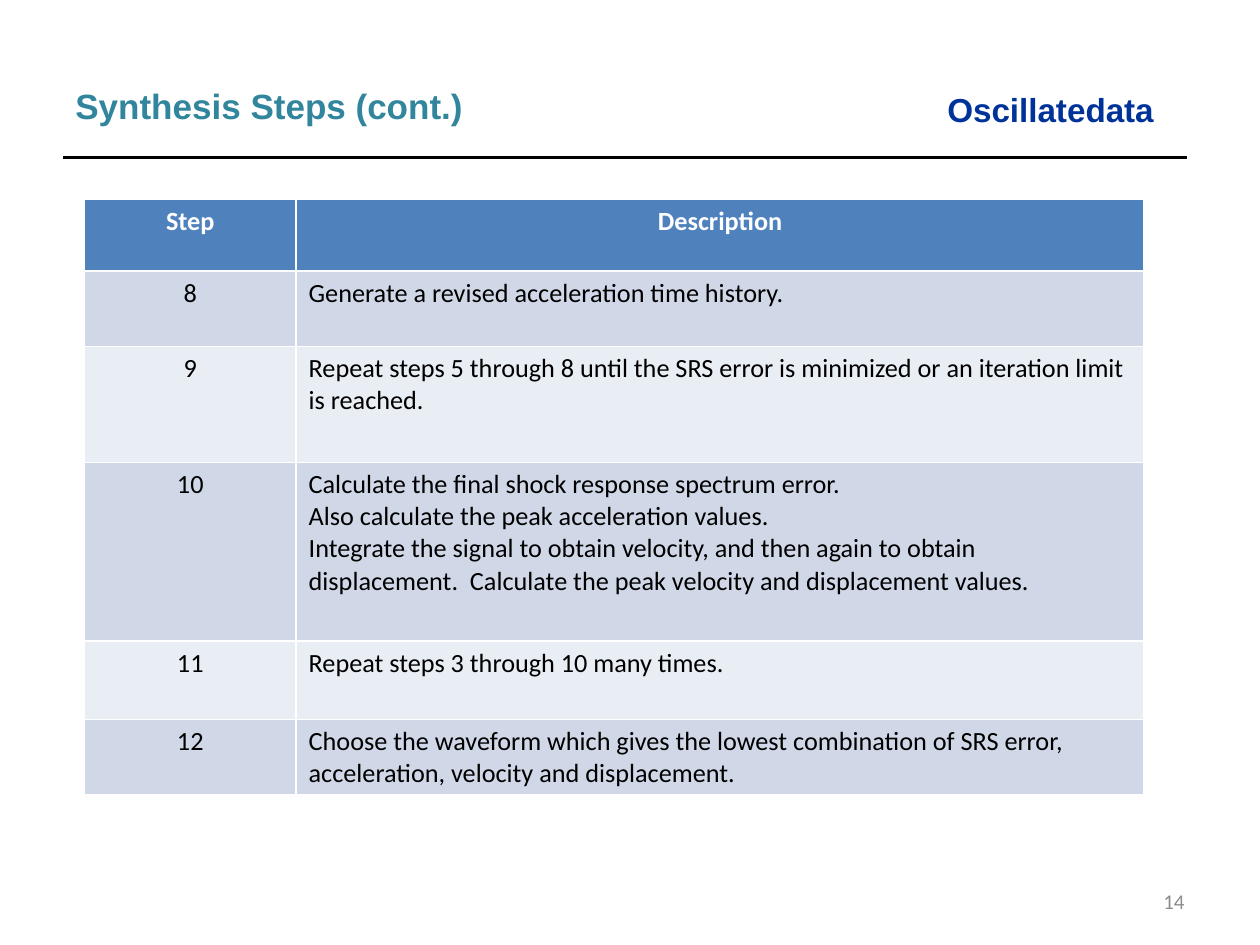
from pptx import Presentation
from pptx.dml.color import RGBColor as RGB
from pptx.enum.shapes import MSO_CONNECTOR as Conn
from pptx.enum.text import MSO_ANCHOR as Anchor, PP_ALIGN as Align
from pptx.oxml.ns import qn
from pptx.util import Inches, Pt
from lxml.etree import SubElement

WIDE, HIGH = 10, 7.5
HUES = {
    "rule": "000000", "brand": "003399", "title": "31859C", "page": "8C8C8C",
    "head": "4F81BD", "odd": "D0D8E8", "even": "E9EDF4",
    "light": "FFFFFF", "dark": "000000",
}
COLS = [1.68, 6.73]
ROWS = [0.57, 0.6, 0.92, 1.42, 0.62, 0.57]
FIRST = 8
STEPS = [
    "Generate a revised acceleration time history.",
    "Repeat steps 5 through 8 until the SRS error is minimized or an "
    "iteration limit is reached.",
    "Calculate the final shock response spectrum error.\n"
    "Also calculate the peak acceleration values.\n"
    "Integrate the signal to obtain velocity, and then again to obtain "
    "displacement.  Calculate the peak velocity and displacement values.",
    "Repeat steps 3 through 10 many times.",
    "Choose the waveform which gives the lowest combination of SRS error, "
    "acceleration, velocity and displacement.",
]


def hue(name):
    return RGB.from_string(HUES[name])


def style(frame, size, face, color, bold=False, align=Align.LEFT):
    for para in frame.paragraphs:
        para.alignment = align
        for run in para.runs:
            font = run.font
            font.size, font.name, font.bold = Pt(size), face, bold
            font.color.rgb = hue(color)


def add_text(slide, box, text, *look, wrap=True, anchor=Anchor.TOP, **more):
    shape = slide.shapes.add_textbox(*map(Inches, box))
    frame = shape.text_frame
    frame.word_wrap = wrap
    frame.vertical_anchor = anchor
    frame.text = text
    style(frame, *look, **more)
    return frame


def add_rule(slide, left, right, top):
    line = slide.shapes.add_connector(
        Conn.STRAIGHT, *map(Inches, (left, top, right, top)))
    line.line.color.rgb = hue("rule")
    line.line.width = Pt(2.25)
    SubElement(line._element.spPr, qn("a:effectLst"))


def fill_cell(cell, text, fill, color, bold, align):
    cell.fill.solid()
    cell.fill.fore_color.rgb = hue(fill)
    cell.text_frame.text = text
    style(cell.text_frame, 15, "Calibri", color, bold, align)


def add_steps(slide, left, top):
    shape = slide.shapes.add_table(
        len(ROWS), len(COLS),
        *map(Inches, (left, top, sum(COLS), sum(ROWS))))
    table = shape.table
    for col, width in zip(table.columns, COLS):
        col.width = Inches(width)
    for row, height in zip(table.rows, ROWS):
        row.height = Inches(height)

    # Header row
    for col, text in enumerate(("Step", "Description")):
        fill_cell(table.cell(0, col), text, "head", "light", True,
                  Align.CENTER)

    # Numbered steps on alternating bands
    for row, text in enumerate(STEPS, 1):
        band = "odd" if row % 2 else "even"
        fill_cell(table.cell(row, 0), str(FIRST + row - 1), band, "dark",
                  False, Align.CENTER)
        fill_cell(table.cell(row, 1), text, band, "dark", False, Align.LEFT)


def main():
    deck = Presentation()
    deck.slide_width, deck.slide_height = Inches(WIDE), Inches(HIGH)
    slide = deck.slides.add_slide(deck.slide_layouts[6])
    edge = WIDE * 0.05

    # Heading band
    add_rule(slide, edge, 9.42, HIGH / 6)
    add_text(slide, (7.42, 0.66, 1.9, 0.42), "Oscillatedata",
             19, "Arial", "brand", True, wrap=False)
    title = add_text(slide, (edge, 0.62, WIDE / 2, 0.44),
                     "Synthesis Steps (cont.)", 20, "Arial", "title", True)
    title.paragraphs[0].space_after = Pt(2)

    # Table of steps
    add_steps(slide, 0.67, 1.58)

    # Page number
    add_text(slide, (7.17, 6.95, 2.33, 0.4), "14", 12, "Calibri", "page",
             align=Align.RIGHT, anchor=Anchor.MIDDLE)
    deck.save("out.pptx")


if __name__ == "__main__":
    main()
